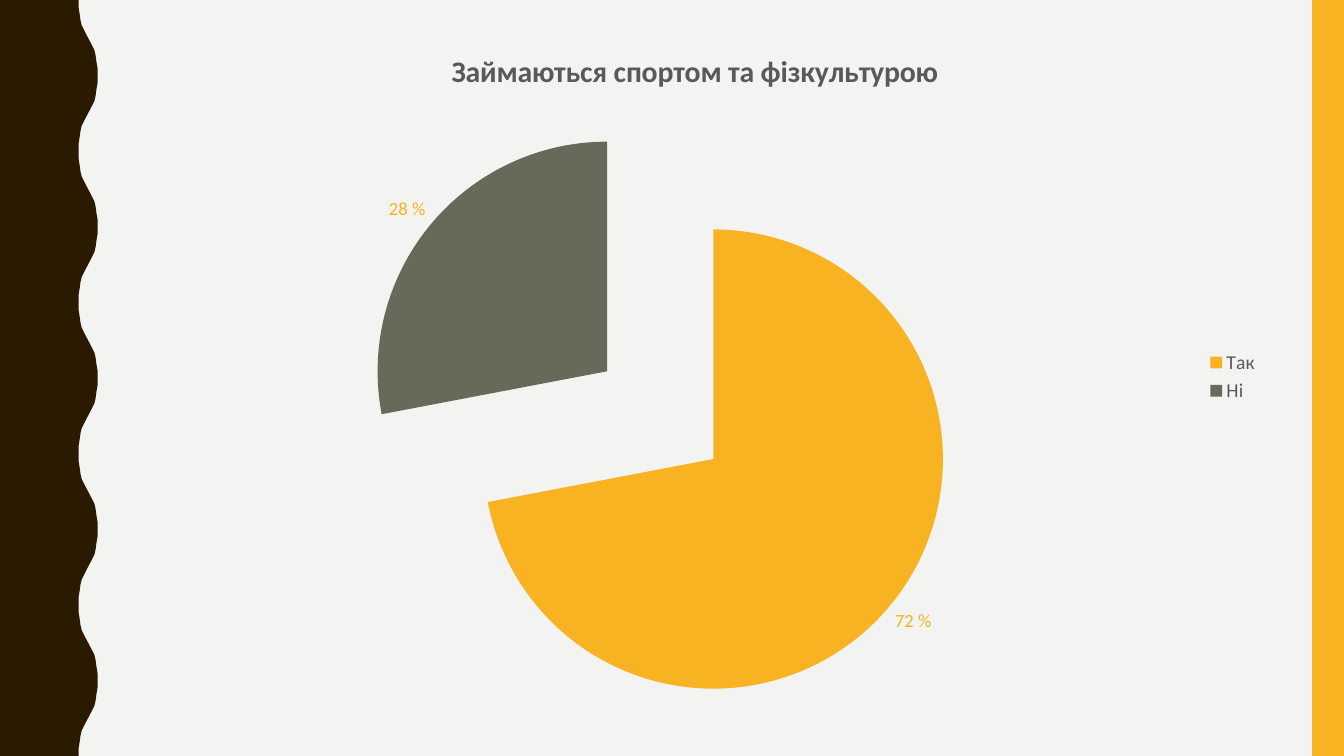
import pptx
import pptx.chart.data
import pptx.dml.color
import pptx.enum.chart
import pptx.enum.shapes
import pptx.oxml
import pptx.util
from pptx.util import Cm, Pt

COLORS = {
    "background": "F3F3F2",
    "wave": "2A1A00",
    "amber": "F8B323",
    "olive": "656A59",
    "text": "595959",
}
FONT = "Calibri"
SLIDE_WIDTH = 33.87
SLIDE_HEIGHT = 19.05
TITLE = "Займаються спортом та фізкультурою"
ANSWERS = {"Так": (72, "amber"), "Ні": (28, "olive")}
EXPLOSION = 30
WAVE_LEFT = 1.98
WAVE_RIGHT = 2.46
WAVE_COUNT = 5
QUARTER_WAVE = [(0, 0), (0, 0.18), (0.03, 0.36), (0.05, 0.51),
                (0.08, 0.64), (0.13, 0.74), (0.18, 0.84)]


def rgb(name):
    return pptx.dml.color.RGBColor.from_string(COLORS[name])


def paint(shape, color):
    shape.shadow.inherit = False
    shape.fill.solid()
    shape.fill.fore_color.rgb = rgb(color)
    shape.line.fill.background()


def set_font(font, size, color, bold=False):
    font.name = FONT
    font.size = Pt(size)
    font.bold = bold
    font.color.rgb = rgb(color)


def wave_points():
    period = SLIDE_HEIGHT / WAVE_COUNT
    depth = WAVE_RIGHT - WAVE_LEFT
    half = QUARTER_WAVE + [(depth - x, period / 2 - y) for x, y in reversed(QUARTER_WAVE)]
    wave = half + [(x, period - y) for x, y in reversed(half[:-1])]
    return [(WAVE_LEFT + x, number * period + y)
            for number in range(WAVE_COUNT) for x, y in wave]


def add_wavy_edge(slide):
    points = wave_points() + [(0, SLIDE_HEIGHT)]
    builder = slide.shapes.build_freeform(0, 0)
    builder.add_line_segments([(Cm(x), Cm(y)) for x, y in points], close=True)
    paint(builder.convert_to_shape(), "wave")


def add_side_bar(slide):
    left = 33.07
    bar = slide.shapes.add_shape(
        pptx.enum.shapes.MSO_SHAPE.RECTANGLE,
        Cm(left), 0, Cm(SLIDE_WIDTH - left), Cm(SLIDE_HEIGHT))
    paint(bar, "amber")


def set_plot_layout(chart, **fractions):
    modes = '<c:layoutTarget val="inner"/><c:xMode val="edge"/><c:yMode val="edge"/>'
    values = "".join(f'<c:{key} val="{value}"/>' for key, value in fractions.items())
    layout = pptx.oxml.parse_xml(
        '<c:layout xmlns:c="http://schemas.openxmlformats.org/drawingml/2006/chart">'
        f"<c:manualLayout>{modes}{values}</c:manualLayout></c:layout>")
    plot_area = chart._chartSpace.chart.plotArea
    for old_layout in plot_area.findall(layout.tag):
        plot_area.remove(old_layout)
    plot_area.insert(0, layout)


def explode(series):
    explosion = pptx.oxml.parse_xml(
        '<c:explosion xmlns:c="http://schemas.openxmlformats.org/drawingml/2006/chart" '
        f'val="{EXPLOSION}"/>')
    series._element.find(explosion.tag.replace("explosion", "dPt")).addprevious(explosion)


def add_pie(slide):
    data = pptx.chart.data.CategoryChartData()
    data.categories = list(ANSWERS)
    data.add_series(TITLE, [value for value, color in ANSWERS.values()])
    chart = slide.shapes.add_chart(
        pptx.enum.chart.XL_CHART_TYPE.PIE,
        Cm(3.02), Cm(0.64), Cm(28.98), Cm(17.7), data).chart
    set_font(chart.font, 10, "text")
    set_plot_layout(chart, x=0.21, y=0.13, w=0.52, h=0.85)

    chart.has_title = True
    chart.chart_title.text_frame.text = TITLE
    set_font(chart.chart_title.text_frame.paragraphs[0].runs[0].font, 21.3, "text", True)

    chart.has_legend = True
    chart.legend.position = pptx.enum.chart.XL_LEGEND_POSITION.RIGHT
    chart.legend.include_in_layout = False
    set_font(chart.legend.font, 14, "text")

    plot = chart.plots[0]
    plot.vary_by_categories = True
    series = plot.series[0]
    for index, (value, color) in enumerate(ANSWERS.values()):
        fill = series.points[index].format.fill
        fill.solid()
        fill.fore_color.rgb = rgb(color)
    explode(series)

    labels = series.data_labels
    labels.show_value = True
    labels.number_format = '0" %"'
    labels.number_format_is_linked = False
    labels.position = pptx.enum.chart.XL_LABEL_POSITION.OUTSIDE_END
    set_font(labels.font, 13.3, "amber")


def main():
    presentation = pptx.Presentation()
    presentation.slide_width = Cm(SLIDE_WIDTH)
    presentation.slide_height = Cm(SLIDE_HEIGHT)
    slide = presentation.slides.add_slide(presentation.slide_layouts[6])
    slide.background.fill.solid()
    slide.background.fill.fore_color.rgb = rgb("background")
    add_wavy_edge(slide)
    add_side_bar(slide)
    add_pie(slide)
    presentation.save("out.pptx")


if __name__ == "__main__":
    main()
